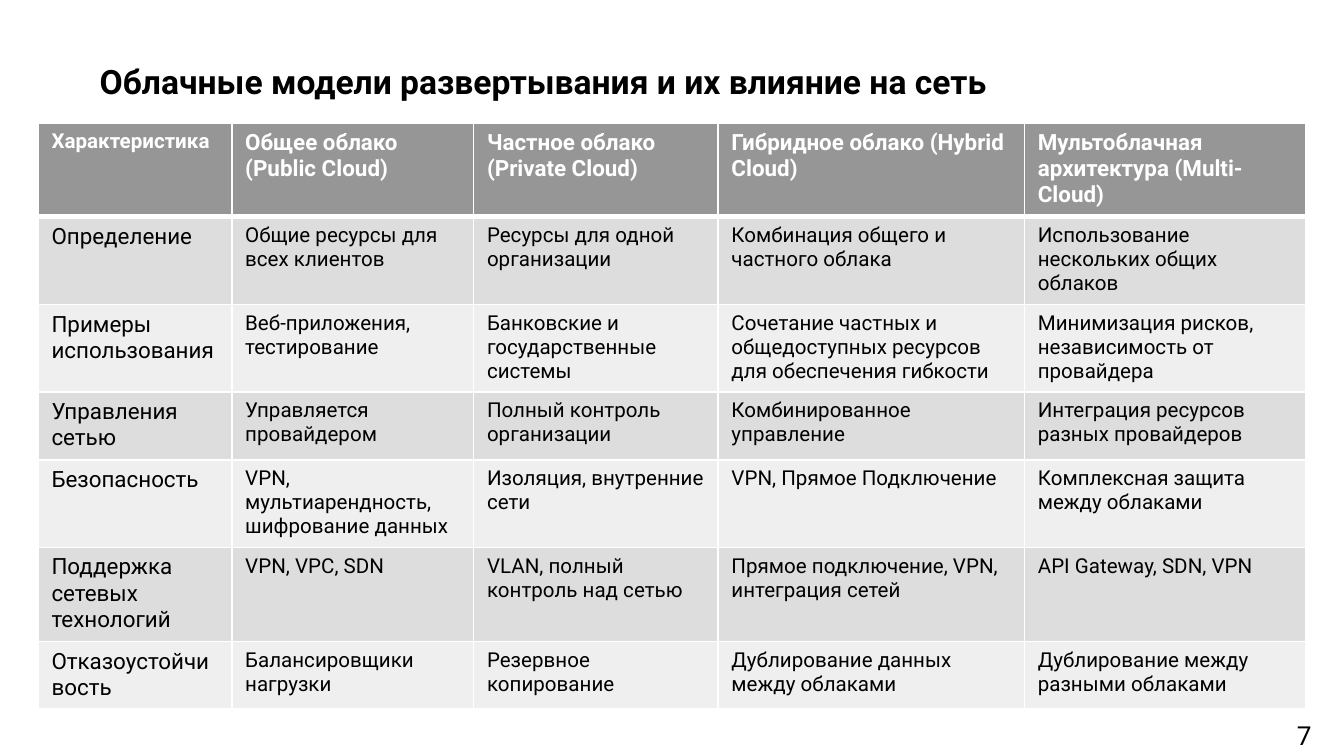
from lxml import etree
from pptx import Presentation
from pptx.dml.color import RGBColor
from pptx.enum import text
from pptx.oxml import ns
from pptx.util import Cm, Pt

HEADING = "Облачные модели развертывания и их влияние на сеть"
PAGE = "7"
MODELS = [
    ("Характеристика", "Общее облако (Public Cloud)", "Частное облако (Private Cloud)",
     "Гибридное облако (Hybrid Cloud)", "Мультоблачная архитектура (Multi-Cloud)"),
    ("Определение", "Общие ресурсы для всех клиентов", "Ресурсы для одной организации",
     "Комбинация общего и частного облака", "Использование нескольких общих облаков"),
    ("Примеры использования", "Веб-приложения, тестирование",
     "Банковские и государственные системы",
     "Сочетание частных и общедоступных ресурсов для обеспечения гибкости",
     "Минимизация рисков, независимость от провайдера"),
    ("Управления сетью", "Управляется провайдером", "Полный контроль организации",
     "Комбинированное управление", "Интеграция ресурсов разных провайдеров"),
    ("Безопасность", "VPN, мультиарендность, шифрование данных",
     "Изоляция, внутренние сети", "VPN, Прямое Подключение",
     "Комплексная защита между облаками"),
    ("Поддержка сетевых технологий", "VPN, VPC, SDN", "VLAN, полный контроль над сетью",
     "Прямое подключение, VPN, интеграция сетей", "API Gateway, SDN, VPN"),
    ("Отказоустойчивость", "Балансировщики нагрузки", "Резервное копирование",
     "Дублирование данных между облаками", "Дублирование между разными облаками"),
]
WIDTHS = [3.66, 4.57, 4.62, 5.79, 5.31]
HEIGHTS = [1.76, 1.66, 1.65, 1.28, 1.64, 1.78, 1.27]
COLORS = {"ink": "000000", "paper": "FFFFFF", "header": "969696",
          "odd": "DDDDDD", "even": "EFEFEF"}


def style(paragraph, size, color="ink", bold=False):
    font = paragraph.font
    font.name = "Roboto"
    font.size = Pt(size)
    font.bold = bold
    font.color.rgb = RGBColor.from_string(COLORS[color])


def add_borders(cell, bottom):
    properties = cell._tc.get_or_add_tcPr()
    widths = {"lnL": 1, "lnR": 1, "lnT": 1, "lnB": bottom}
    for position, (side, width) in enumerate(widths.items()):
        line = etree.Element(ns.qn(f"a:{side}"), w=str(Pt(width)))
        fill = etree.SubElement(line, ns.qn("a:solidFill"))
        etree.SubElement(fill, ns.qn("a:srgbClr"), val=COLORS["paper"])
        properties.insert(position, line)


def add_heading(slide):
    heading = slide.shapes.title
    heading.left, heading.top, heading.width, heading.height = (
        Cm(1.63), Cm(0.86), Cm(18.64), Cm(1.47))
    frame = heading.text_frame
    frame.text = HEADING
    frame.auto_size = text.MSO_AUTO_SIZE.NONE
    frame.vertical_anchor = text.MSO_ANCHOR.MIDDLE
    paragraph = frame.paragraphs[0]
    paragraph.alignment = text.PP_ALIGN.LEFT
    paragraph.line_spacing = 0.8
    style(paragraph, 18, bold=True)


def add_models(slide):
    models = slide.shapes.add_table(
        len(MODELS), len(WIDTHS), Cm(0.72), Cm(2.32),
        Cm(sum(WIDTHS)), Cm(sum(HEIGHTS))).table
    for column, width in zip(models.columns, WIDTHS):
        column.width = Cm(width)
    for row, height in zip(models.rows, HEIGHTS):
        row.height = Cm(height)
    for r, entries in enumerate(MODELS):
        header = r == 0
        shade = "header" if header else "odd" if r % 2 else "even"
        for c, entry in enumerate(entries):
            cell = models.cell(r, c)
            cell.text = entry
            cell.fill.solid()
            cell.fill.fore_color.rgb = RGBColor.from_string(COLORS[shade])
            add_borders(cell, 3 if header else 1)
            style(cell.text_frame.paragraphs[0], 12 if header != (c == 0) else 11,
                  "paper" if header else "ink", header)


def add_page_number(slide):
    frame = slide.shapes.add_textbox(Cm(24.26), Cm(13.39), Cm(1.14), Cm(0.89)).text_frame
    frame.word_wrap = True
    frame.text = PAGE
    paragraph = frame.paragraphs[0]
    paragraph.alignment = text.PP_ALIGN.JUSTIFY
    paragraph.line_spacing = 1.15
    style(paragraph, 14)


def main():
    deck = Presentation()
    deck.slide_width, deck.slide_height = Cm(25.4), Cm(14.29)
    slide = deck.slides.add_slide(deck.slide_layouts[5])
    add_page_number(slide)
    add_models(slide)
    add_heading(slide)
    deck.save("out.pptx")


if __name__ == "__main__":
    main()
